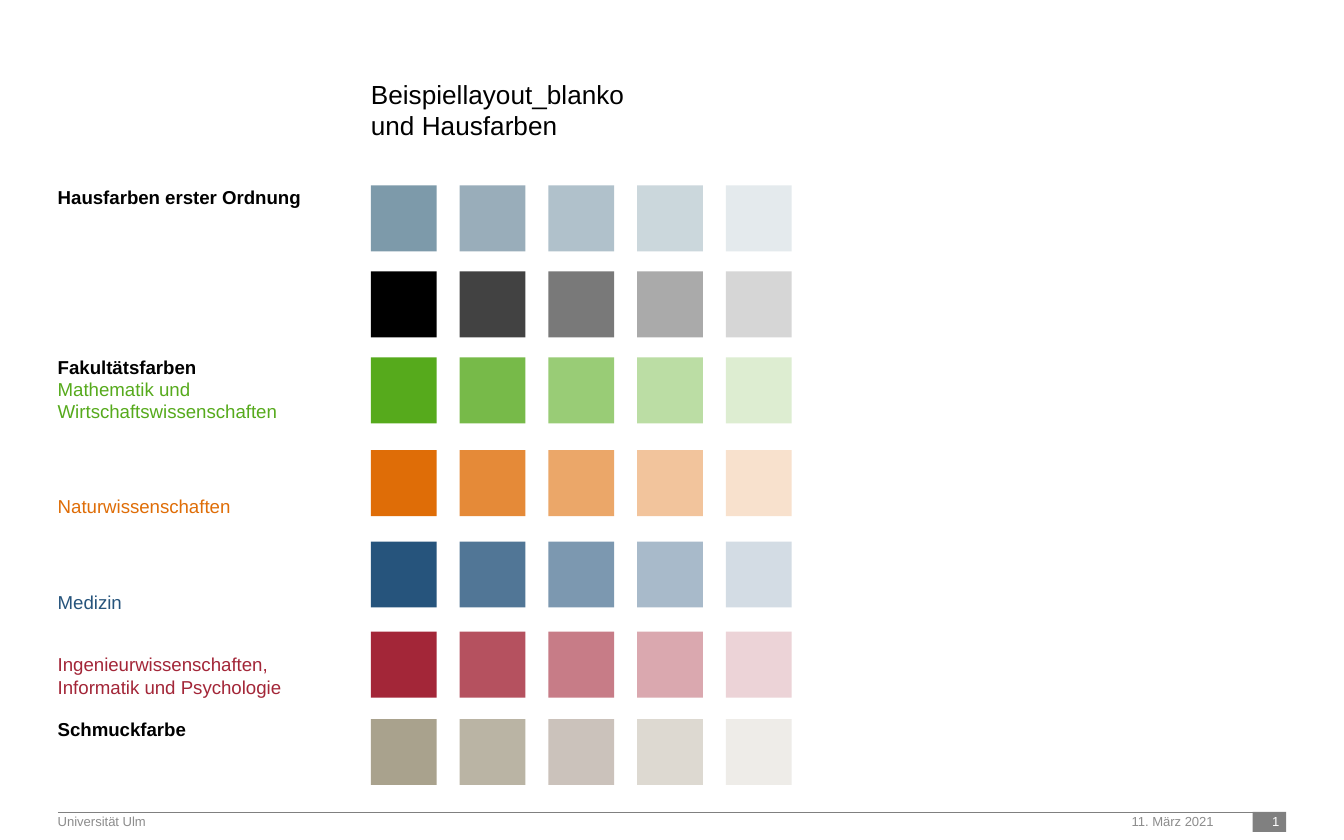
from lxml.etree import SubElement
from pptx import Presentation
from pptx.dml.color import RGBColor
from pptx.enum.shapes import MSO_CONNECTOR, MSO_SHAPE
from pptx.enum.text import MSO_ANCHOR, PP_ALIGN
from pptx.oxml.ns import qn
from pptx.util import Inches, Pt

FONT = "Arial"
BLACK = RGBColor(0x00, 0x00, 0x00)
WHITE = RGBColor(0xFF, 0xFF, 0xFF)
RULE_GRAY = RGBColor(0x80, 0x80, 0x80)
FOOTER_GRAY = RGBColor(0x8C, 0x8C, 0x8C)
GREEN = RGBColor(0x56, 0xAA, 0x1C)
ORANGE = RGBColor(0xDF, 0x6D, 0x07)
BLUE = RGBColor(0x26, 0x54, 0x7C)
RED = RGBColor(0xA3, 0x26, 0x38)

# Content
TITLE = ["Beispiellayout_blanko", "und Hausfarben"]

# Top of each palette row and its shades from dark to light
PALETTES = [
    (1.38, "7D9AAA 99ADBA B0C1CB CBD7DC E4EAED"),
    (2.02, "000000 424242 797979 AAAAAA D6D6D6"),
    (2.66, "56AA1C 77BA49 99CC76 BBDDA4 DDEDD1"),
    (3.35, "DF6D07 E58A38 EBA769 F2C49C F8E1CD"),
    (4.03, "26547C 517696 7C98B0 A8BACA D3DCE4"),
    (4.70, "A32638 B5515F C77C87 DAA8AF ECD3D7"),
    (5.35, "A9A28D BAB4A4 CBC2BB DDD9D1 EEECE8"),
]

# Top, text, line count, colour, bold
LABELS = [
    (1.38, "Hausfarben erster Ordnung", 1, BLACK, True),
    (2.65, "Fakultätsfarben", 1, BLACK, True),
    (2.81, "Mathematik und Wirtschaftswissenschaften", 2, GREEN, False),
    (3.68, "Naturwissenschaften", 1, ORANGE, False),
    (4.40, "Medizin", 1, BLUE, False),
    (4.86, "Ingenieurwissenschaften, Informatik und Psychologie", 2, RED, False),
    (5.34, "Schmuckfarbe", 1, BLACK, True),
]

# Left, width, text, colour, alignment
FOOTER = [
    (0.43, 7.93, "Universität Ulm", FOOTER_GRAY, PP_ALIGN.LEFT),
    (8.42, 0.90, "11. März 2021", FOOTER_GRAY, PP_ALIGN.LEFT),
    (9.29, 0.23, "1", WHITE, PP_ALIGN.RIGHT),
]

# Layout in inches
MARGIN, SWATCH_LEFT = 0.43, 2.76
SWATCH, SWATCH_PITCH = 0.49, 0.66
LABEL_WIDTH, LABEL_LINE = 1.97, 0.17
FOOTER_TOP = 6.04


def write(frame, lines, size, color, bold=False, align=PP_ALIGN.LEFT, spacing=None):
    frame.margin_left = frame.margin_right = 0
    frame.margin_top = frame.margin_bottom = 0
    frame.word_wrap = True
    frame.vertical_anchor = MSO_ANCHOR.TOP
    frame.text = "\n".join(lines)
    for paragraph in frame.paragraphs:
        paragraph.alignment = align
        paragraph.line_spacing = spacing
        paragraph.space_before = Pt(0)
        paragraph.font.name = FONT
        paragraph.font.size = Pt(size)
        paragraph.font.bold = bold
        paragraph.font.color.rgb = color


def add_text(slide, left, top, width, height, text, *style, **options):
    box = slide.shapes.add_textbox(
        Inches(left), Inches(top), Inches(width), Inches(height))
    write(box.text_frame, [text], *style, **options)


def add_block(slide, left, top, width, height, color):
    block = slide.shapes.add_shape(
        MSO_SHAPE.RECTANGLE,
        Inches(left), Inches(top), Inches(width), Inches(height))
    block.shadow.inherit = False
    block.fill.solid()
    block.fill.fore_color.rgb = color
    block.line.fill.background()


def main():
    prs = Presentation()
    prs.slide_width, prs.slide_height = Inches(10), Inches(6.25)
    slide = prs.slides.add_slide(prs.slide_layouts[5])

    # Footer
    add_block(slide, 9.32, FOOTER_TOP, 0.25, 0.15, RULE_GRAY)
    rule = slide.shapes.add_connector(
        MSO_CONNECTOR.STRAIGHT, Inches(MARGIN), Inches(FOOTER_TOP),
        Inches(10 - MARGIN), Inches(FOOTER_TOP))
    rule.line.color.rgb = RULE_GRAY
    rule.line.width = Pt(0.25)
    SubElement(rule._element.spPr, qn("a:effectLst"))
    for left, width, text, color, align in FOOTER:
        add_text(slide, left, FOOTER_TOP + 0.01, width, 0.15, text, 7, color,
                 align=align)

    # Title
    title = slide.shapes.title
    title.left, title.top = Inches(SWATCH_LEFT), Inches(0.58)
    title.width, title.height = Inches(4.43), Inches(0.47)
    write(title.text_frame, TITLE, 14, BLACK, spacing=Pt(16.8))

    # Colour swatches
    for top, shades in PALETTES:
        for column, shade in enumerate(shades.split()):
            add_block(slide, SWATCH_LEFT + column * SWATCH_PITCH, top,
                      SWATCH, SWATCH, RGBColor.from_string(shade))

    # Palette labels
    for top, text, line_count, color, bold in LABELS:
        add_text(slide, MARGIN, top, LABEL_WIDTH, line_count * LABEL_LINE,
                 text, 10, color, bold=bold, spacing=Pt(12))

    prs.save("out.pptx")


if __name__ == "__main__":
    main()
